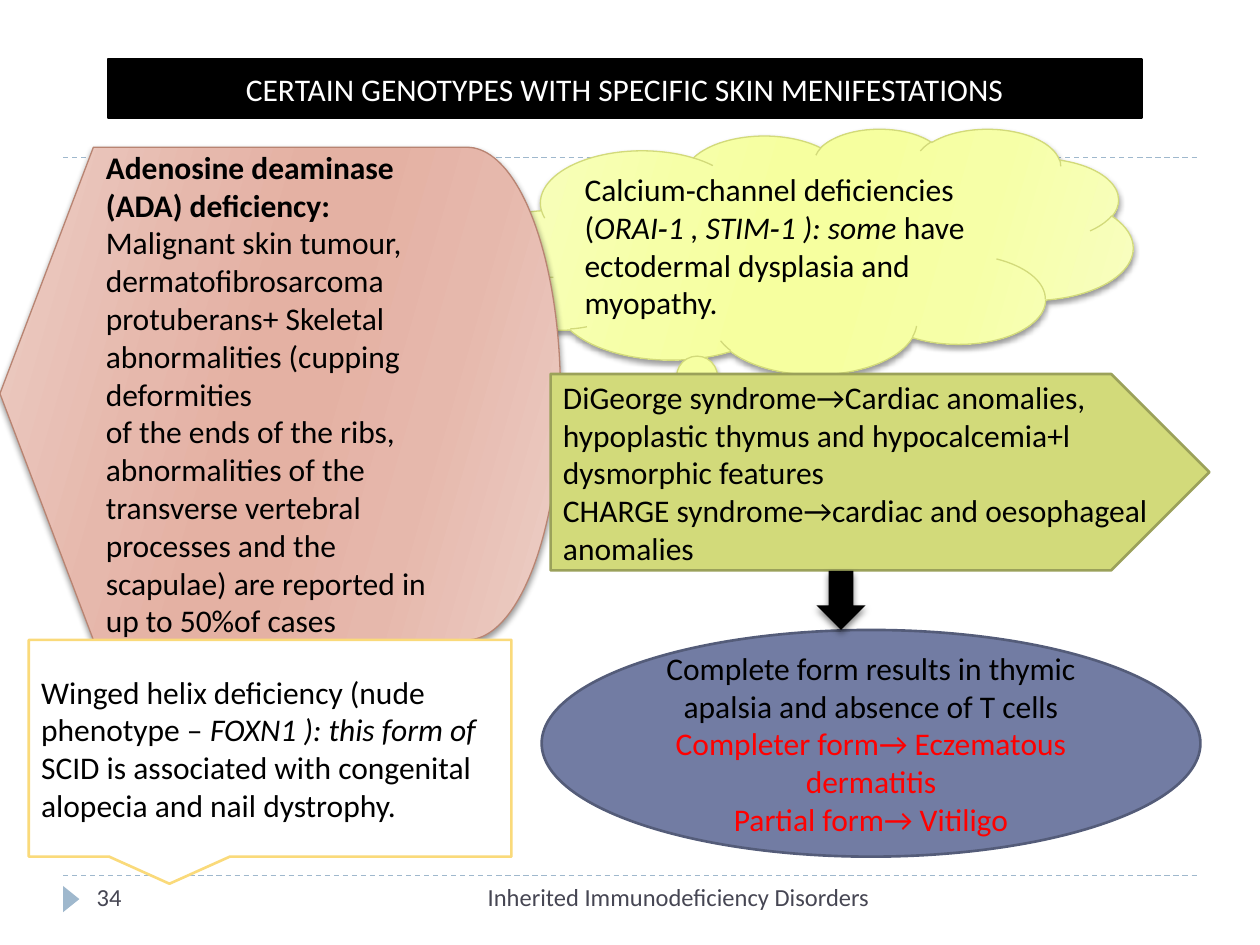
from dataclasses import dataclass
from typing import Optional

from lxml.etree import SubElement
from pptx import Presentation
from pptx.dml.color import RGBColor
from pptx.enum.dml import MSO_LINE
from pptx.enum.shapes import MSO_CONNECTOR, MSO_SHAPE as Geo
from pptx.enum.text import MSO_ANCHOR as Anchor, PP_ALIGN as Align
from pptx.oxml.ns import qn
from pptx.util import Cm, Pt

FONT = "Calibri"
BLACK, WHITE, RED = "000000", "FFFFFF", "FF0000"
GREY, RULE = "464653", "9FB8CD"
STOPS = (0, 30, 45, 55, 73, 100)


@dataclass
class Run:
    text: str
    color: str = BLACK
    bold: bool = False
    italic: bool = False
    size: float = 18


@dataclass
class Shadow:
    alpha: int
    blur: float
    dist: float = 2


@dataclass
class Block:
    geo: Geo
    box: tuple[float, float, float, float]  # left, top, width, height in cm
    fill: str | tuple[str, str, str]  # one colour, or edge, middle and core
    line: Optional[str] = None
    weight: float = 1.5
    paras: tuple[tuple[Run, ...], ...] = ()
    align: Align = Align.LEFT
    shadow: Optional[Shadow] = None
    rotation: float = 0


def rgb(color: str) -> RGBColor:
    return RGBColor.from_string(color)


def place(sp, box) -> None:
    sp.left, sp.top, sp.width, sp.height = map(Cm, box)


def write(tf, paras, align=Align.LEFT, anchor=Anchor.MIDDLE) -> None:
    tf.word_wrap = True
    tf.vertical_anchor = anchor
    for i, runs in enumerate(paras):
        p = tf.paragraphs[0] if i == 0 else tf.add_paragraph()
        p.alignment = align
        for run in runs:
            r = p.add_run()
            r.text = run.text
            f = r.font
            f.name, f.size = FONT, Pt(run.size)
            f.bold, f.italic = run.bold, run.italic
            f.color.rgb = rgb(run.color)


def paint(sp, fill, line=None, weight=1.5) -> None:
    if isinstance(fill, str):
        sp.fill.solid()
        sp.fill.fore_color.rgb = rgb(fill)
    else:
        # Symmetric gradient: edge, middle, core, core, middle, edge
        sp.fill.gradient()
        sp.fill.gradient_angle = 360 - 16
        stops = sp._element.spPr.find(qn("a:gradFill")).find(qn("a:gsLst"))
        for gs in list(stops):
            stops.remove(gs)
        for pos, color in zip(STOPS, fill + fill[::-1]):
            gs = SubElement(stops, qn("a:gs"), pos=str(pos * 1000))
            SubElement(gs, qn("a:srgbClr"), val=color)
    if line:
        sp.line.color.rgb = rgb(line)
        sp.line.width = Pt(weight)
    else:
        sp.line.fill.background()


def add_shadow(sp, shadow: Shadow) -> None:
    effects = sp._element.spPr.find(qn("a:effectLst"))
    outer = SubElement(effects, qn("a:outerShdw"), blurRad=str(Pt(shadow.blur)),
                       dist=str(Pt(shadow.dist)), dir="5400000", rotWithShape="0")
    color = SubElement(outer, qn("a:srgbClr"), val=BLACK)
    SubElement(color, qn("a:alpha"), val=str(shadow.alpha * 1000))


def add_block(slide, block: Block) -> None:
    sp = slide.shapes.add_shape(block.geo, *map(Cm, block.box))
    sp.rotation = block.rotation
    paint(sp, block.fill, block.line, block.weight)
    sp.shadow.inherit = False
    if block.shadow:
        add_shadow(sp, block.shadow)
    if block.paras:
        write(sp.text_frame, block.paras, block.align)


def add_rule(slide, y: float) -> None:
    cn = slide.shapes.add_connector(MSO_CONNECTOR.STRAIGHT,
                                    Cm(1.27), Cm(y), Cm(24.13), Cm(y))
    cn.line.color.rgb = rgb(RULE)
    cn.line.width = Pt(0.75)
    cn.line.dash_style = MSO_LINE.DASH
    SubElement(cn._element.spPr, qn("a:effectLst"))


def add_label(slide, box, text: str, align: Align) -> None:
    tb = slide.shapes.add_textbox(*map(Cm, box))
    write(tb.text_frame, ((Run(text, GREY, size=14),),), align, Anchor.TOP)


SOFT = Shadow(alpha=40, blur=3)

MARKER = Block(Geo.ISOSCELES_TRIANGLE, (1.17, 17.96, 0.53, 0.33), RULE, rotation=90)

BLOCKS = (
    Block(Geo.CLOUD_CALLOUT, (9.73, 2.59, 13.11, 4.95),
          ("F8FEC2", "F6FFA7", "F6FF9F"), "D2DA7A", 0.75, shadow=SOFT,
          paras=((Run("Calcium‐channel deficiencies ("),
                  Run("ORAI‐1 , STIM‐1 ): some ", italic=True),
                  Run("have ectodermal dysplasia and myopathy.")),)),
    Block(Geo.FLOWCHART_DISPLAY, (0, 2.97, 11.3, 9.93),
          ("ECCEC6", "E6B8AC", "E4B1A3"), "B88472", 0.75, shadow=SOFT,
          paras=((Run("Adenosine deaminase (ADA) deficiency:", bold=True),),
                 (Run("Malignant skin tumour, dermatofibrosarcoma protuberans+ "
                      "Skeletal abnormalities (cupping deformities"),),
                 (Run("of the ends of the ribs, abnormalities of the transverse "
                      "vertebral processes and the scapulae) are reported in "
                      "up to 50%of cases"),))),
    Block(Geo.RECTANGULAR_CALLOUT, (0.58, 12.9, 9.73, 4.37), WHITE, "FADA7A",
          paras=((Run("Winged helix deficiency (nude phenotype – "),
                  Run("FOXN1 ): this form of ", italic=True),
                  Run("SCID is associated with congenital alopecia "
                      "and nail dystrophy.")),)),
    Block(Geo.PENTAGON, (11.1, 7.54, 13.28, 3.96), "D2DA7A", "9BA15A",
          paras=((Run("DiGeorge syndrome→Cardiac anomalies, hypoplastic thymus "
                      "and hypocalcemia+l dysmorphic features"),),
                 (Run("CHARGE syndrome→cardiac and oesophageal anomalies"),))),
    Block(Geo.OVAL, (10.92, 12.7, 13.28, 4.57), "727CA3", "545C79",
          align=Align.CENTER,
          paras=((Run("Complete form results in thymic apalsia and "
                      "absence of T cells"),),
                 (Run("Completer form→ Eczematous dermatitis", RED),),
                 (Run("Partial form→ Vitiligo", RED),))),
    Block(Geo.DOWN_ARROW, (16.46, 11.51, 0.99, 1.19), BLACK,
          shadow=Shadow(alpha=50, blur=4)),
)


def main() -> None:
    prs = Presentation()
    prs.slide_width, prs.slide_height = Cm(25.4), Cm(19.05)
    slide = prs.slides.add_slide(prs.slide_layouts[5])

    # Title banner
    title = slide.shapes.title
    place(title, (2.18, 1.19, 20.83, 1.19))
    paint(title, BLACK, BLACK)
    write(title.text_frame,
          ((Run("CERTAIN GENOTYPES WITH SPECIFIC SKIN MENIFESTATIONS", WHITE),),),
          Align.CENTER)

    # Rules and footer
    for y in (17.65, 3.18):
        add_rule(slide, y)
    add_block(slide, MARKER)
    add_label(slide, (8.05, 17.65, 9.73, 1.02),
              "Inherited Immunodeficiency Disorders", Align.RIGHT)
    add_label(slide, (1.7, 17.65, 5.51, 1.02), "34", Align.LEFT)

    # Genotype blocks, back to front
    for block in BLOCKS:
        add_block(slide, block)

    prs.save("out.pptx")


if __name__ == "__main__":
    main()
